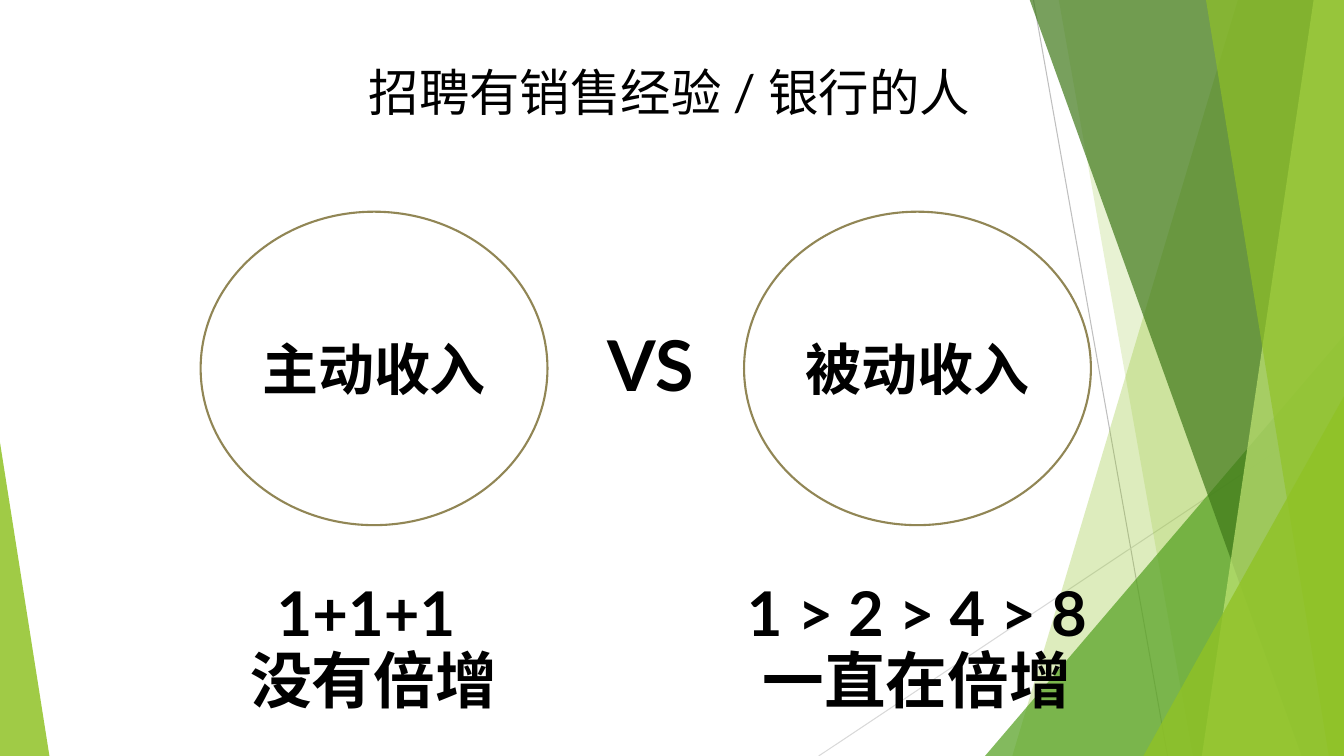
from lxml.etree import SubElement
from pptx import Presentation
from pptx.dml.color import RGBColor
from pptx.enum.shapes import MSO_CONNECTOR, MSO_SHAPE
from pptx.enum.text import MSO_ANCHOR, PP_ALIGN
from pptx.oxml.ns import qn
from pptx.util import Inches, Pt

COLORS = {
    "white": "FFFFFF", "black": "000000", "olive": "918655",
    "gray": "BFBFBF", "pale_gray": "D9D9D9", "green": "90C226",
    "leaf": "54A021", "forest": "3F7819", "lime": "C0E474",
}
FONT = "Lato"
WIDTH, HEIGHT, BAND_TOP = 13.33, 7.5, -0.01

RAYS = [((10.25, 0), (11.58, 7.5), "gray"), ((13.33, 4.03), (8.12, 7.5), "pale_gray")]
LOWER_BANDS = [(12.28, 10.04, "green", 30), (10.5, 11.83, "green", 20)]
UPPER_BANDS = [(10.21, 12.91, "forest", 70), (13.03, 11.92, "lime", 70), (11.96, 13.18, "green", 65)]
LEAF_TRIANGLE = (9.77, 3.33, 3.56, 1, "leaf", 72)
CORNER_TRIANGLES = [(11.34, 3.93, 1.99, 1, "green", 80), (0, 4.39, 0.49, 0, "green", 85)]

TITLE = "招聘有销售经验 / 银行的人"
VERSUS = "VS"
INCOMES = [
    ("主动收入", "1+1+1 \n没有倍增"),
    ("被动收入", "1 > 2 > 4 > 8\n一直在倍增"),
]
FIRST_CIRCLE, FIRST_CAPTION, COLUMN_STEP = 1.99, 1.42, 5.39
CIRCLE_TOP, CIRCLE_SIZE = 2.1, (3.44, 3.11)
CAPTION_TOP, CAPTION_SIZE = 5.21, (4.57, 2.48)


def color(name):
    return RGBColor.from_string(COLORS[name])


def paint(shape, name, opacity=100):
    shape.shadow.inherit = False
    shape.fill.solid()
    shape.fill.fore_color.rgb = color(name)
    shape.line.fill.background()
    if opacity < 100:
        tint = shape.fill._xPr.find(qn("a:solidFill"))[0]
        SubElement(tint, qn("a:alpha")).set("val", str(opacity * 1000))


def add_ray(slide, start, end, name):
    points = [Inches(value) for value in start + end]
    ray = slide.shapes.add_connector(MSO_CONNECTOR.STRAIGHT, *points)
    ray.line.color.rgb = color(name)
    ray.line.width = Pt(0.75)
    SubElement(ray._element.spPr, qn("a:effectLst"))


def add_band(slide, top_x, bottom_x, name, opacity):
    corners = [(WIDTH, BAND_TOP), (WIDTH, HEIGHT), (bottom_x, HEIGHT)]
    builder = slide.shapes.build_freeform(Inches(top_x), Inches(BAND_TOP))
    builder.add_line_segments([(Inches(x), Inches(y)) for x, y in corners], close=True)
    paint(builder.convert_to_shape(), name, opacity)


def add_triangle(slide, left, top, width, apex, name, opacity):
    box = [Inches(value) for value in (left, top, width, HEIGHT - top)]
    triangle = slide.shapes.add_shape(MSO_SHAPE.ISOSCELES_TRIANGLE, *box)
    triangle.adjustments[0] = apex
    paint(triangle, name, opacity)


def write(shape, text, size, bold=True, anchor=MSO_ANCHOR.MIDDLE, spacing=None):
    frame = shape.text_frame
    frame.word_wrap = True
    frame.vertical_anchor = anchor
    frame.text = text
    for paragraph in frame.paragraphs:
        paragraph.alignment = PP_ALIGN.CENTER
        paragraph.line_spacing = spacing
        for run in paragraph.runs:
            run.font.name = FONT
            run.font.size = Pt(size)
            run.font.bold = bold
            run.font.color.rgb = color("black")


def add_label(slide, left, top, size, *text_options, **options):
    box = [Inches(value) for value in (left, top, *size)]
    write(slide.shapes.add_textbox(*box), *text_options, **options)


def add_circle(slide, left, text):
    box = [Inches(value) for value in (left, CIRCLE_TOP, *CIRCLE_SIZE)]
    circle = slide.shapes.add_shape(MSO_SHAPE.OVAL, *box)
    paint(circle, "white")
    circle.line.color.rgb = color("olive")
    circle.line.width = Pt(1.5)
    write(circle, text, 40)


def main():
    """Build the slide comparing active and passive income."""
    presentation = Presentation()
    presentation.slide_width, presentation.slide_height = Inches(WIDTH), Inches(HEIGHT)
    slide = presentation.slides.add_slide(presentation.slide_layouts[6])

    for ray in RAYS:
        add_ray(slide, *ray)
    for band in LOWER_BANDS:
        add_band(slide, *band)
    add_triangle(slide, *LEAF_TRIANGLE)
    for band in UPPER_BANDS:
        add_band(slide, *band)
    for triangle in CORNER_TRIANGLES:
        add_triangle(slide, *triangle)

    add_label(slide, 0.89, 0.56, (11.5, 1.7), TITLE, 36, bold=False, anchor=MSO_ANCHOR.TOP)
    for column, (income, caption) in enumerate(INCOMES):
        shift = column * COLUMN_STEP
        add_circle(slide, FIRST_CIRCLE + shift, income)
        add_label(slide, FIRST_CAPTION + shift, CAPTION_TOP, CAPTION_SIZE, caption, 44, spacing=0.9)
    add_label(slide, 4.17, 2.42, CAPTION_SIZE, VERSUS, 50, spacing=0.9)
    presentation.save("out.pptx")


if __name__ == "__main__":
    main()
